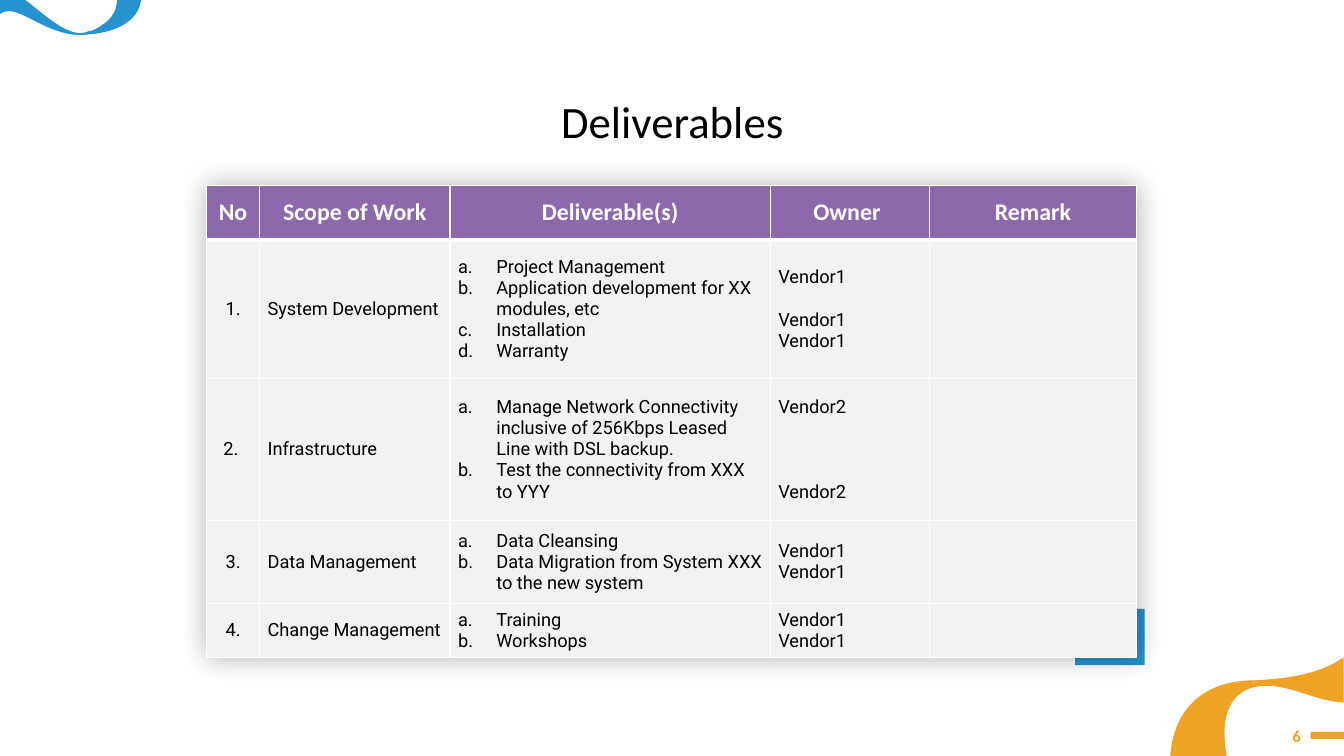
from lxml import etree
from pptx import Presentation
from pptx import util as u
from pptx.dml.color import RGBColor
from pptx.enum import shapes, text
from pptx.oxml import ns

PURPLE = RGBColor(0x8C, 0x69, 0xAD)
BLUE = RGBColor(0x25, 0x93, 0xCF)
ORANGE = RGBColor(0xEF, 0xA3, 0x25)
GREY = RGBColor(0xF2, 0xF2, 0xF2)
BLACK = RGBColor(0, 0, 0)
WHITE = RGBColor(0xFF, 0xFF, 0xFF)

COLS, ROWS = 160, 90
UNIT = u.Inches(7.5) // ROWS
LINE = 15.2

COL_WIDTHS = [6.3, 22.68, 38.12, 18.92, 24.74]
ROW_HEIGHTS = [6.48, 16.53, 16.87, 9.93, 6.36]
HEADERS = ["No", "Scope of Work", "Deliverable(s)", "Owner ", "Remark"]
SCOPES = [
    ("1.", "System Development",
     ["Project Management", "Application development for XX modules, etc",
      "Installation", "Warranty"],
     ["Vendor1", "Vendor1", "Vendor1"], 1),
    ("2. ", "Infrastructure",
     ["a.\tManage Network Connectivity inclusive of 256Kbps Leased Line with DSL backup.",
      "b.\tTest the connectivity from XXX to YYY"],
     ["Vendor2", "Vendor2"], 3),
    ("3.", "Data Management",
     ["Data Cleansing", "Data Migration from System XXX to the new system"],
     ["Vendor1", "Vendor1"], 0),
    ("4.", "Change Management",
     ["Training", "Workshops"], ["Vendor1", "Vendor1"], 0),
]

ORANGE_CURVES = [
    [(82, 30), (90, 28, 97, 28, 105, 29), (105, 29, 79, 20, 50, 28),
     (6, 43, 1, 84, 0, 98), (56, 98), (52, 76, 50, 39, 82, 30)],
    [(82, 23), (70, 23, 59, 25, 50, 28), (79, 20, 105, 29, 105, 29),
     (127, 32, 149, 44, 172, 45), (172, 0), (154, 13, 128, 21, 82, 23)],
]
BLUE_CURVES = [
    [(140, 16), (116, 16), (116, 16, 118, 32, 101, 42), (101, 42),
     (101, 42, 97, 46, 89, 48), (88, 48), (85, 49, 83, 50, 80, 50),
     (76, 50, 71, 50, 65, 50), (73, 52, 81, 52, 90, 51),
     (141, 46, 140, 16, 140, 16)],
    [(80, 50), (51, 49, 19, 0, 0, 9), (0, 31), (14, 20, 35, 43, 65, 50),
     (71, 50, 76, 50, 80, 50)],
]


def grid(*cells):
    return [round(c * UNIT) for c in cells]


def paint(sp, color):
    sp.shadow.inherit = False
    sp.fill.solid()
    sp.fill.fore_color.rgb = color
    sp.line.fill.background()


def block(s, box, color):
    paint(s.shapes.add_shape(shapes.MSO_SHAPE.RECTANGLE, *grid(*box)), color)


def style(p, size, font, color, bold=False, align=text.PP_ALIGN.LEFT):
    p.alignment = align
    for r in p.runs:
        r.font.size = u.Pt(size)
        r.font.name = font
        r.font.bold = bold
        r.font.color.rgb = color


def label(s, box, words, size, color, bold, align, anchor):
    tf = s.shapes.add_textbox(*grid(*box)).text_frame
    tf.word_wrap = True
    tf.vertical_anchor = anchor
    tf.text = words
    style(tf.paragraphs[0], size, "Calibri", color, bold, align)


def bend(sp):
    segments = list(sp._element.iter(ns.qn("a:lnTo")))
    for i in range(0, len(segments), 3):
        curve = etree.Element(ns.qn("a:cubicBezTo"))
        segments[i].addprevious(curve)
        for segment in segments[i:i + 3]:
            curve.append(segment[0])
            segment.getparent().remove(segment)


def ribbon(s, box, cells, curves, color):
    left, top, width, height = grid(*box)
    group = s.shapes.add_group_shape()

    def place(x, y):
        return left + width * x / cells[0], top + height * y / cells[1]

    for first, *parts in curves:
        fb = group.shapes.build_freeform(*place(*first))
        for part in parts:
            part = part * 3 if len(part) == 2 else part
            fb.add_line_segments([place(x, y) for x, y in zip(part[::2], part[1::2])],
                                 close=part[-2:] == first)
        sp = fb.convert_to_shape()
        bend(sp)
        paint(sp, color)


def border(cell, heavy):
    tcPr = cell._tc.get_or_add_tcPr()
    for side in "LRTB":
        ln = etree.SubElement(tcPr, ns.qn("a:ln" + side),
                              w=str(u.Pt(3 if side == heavy else 1)))
        fill = etree.SubElement(ln, ns.qn("a:solidFill"))
        etree.SubElement(fill, ns.qn("a:srgbClr"), val=str(WHITE))


def soft_shadow(table):
    effects = etree.Element(ns.qn("a:effectLst"))
    table._tbl.tblPr.insert(0, effects)
    shadow = etree.SubElement(effects, ns.qn("a:outerShdw"),
                              blurRad=str(u.Pt(20)), dist="0", dir="0")
    color = etree.SubElement(shadow, ns.qn("a:srgbClr"), val=str(BLACK))
    etree.SubElement(color, ns.qn("a:alpha"), val="30000")


def hang(p):
    pPr = p._p.get_or_add_pPr()
    pPr.set("marL", str(u.Inches(0.38)))
    pPr.set("indent", str(-u.Inches(0.38)))
    if "\t" not in p.text:
        etree.SubElement(pPr, ns.qn("a:buFont"), typeface="+mj-lt")
        etree.SubElement(pPr, ns.qn("a:buAutoNum"), type="alphaLcPeriod")


def fill_cell(cell, lines, color, heavy):
    cell.margin_left = cell.margin_right = u.Inches(0.08)
    cell.margin_top = cell.margin_bottom = u.Inches(0.04)
    cell.vertical_anchor = text.MSO_ANCHOR.MIDDLE
    border(cell, heavy)
    cell.fill.solid()
    cell.fill.fore_color.rgb = color
    cell.text_frame.text = "\n".join(lines)
    return cell.text_frame.paragraphs


def deliverables(s, box):
    frame = s.shapes.add_table(len(ROW_HEIGHTS), len(COL_WIDTHS), *grid(*box))
    table = frame.table
    table.horz_banding = False
    soft_shadow(table)
    for col, width in zip(table.columns, grid(*COL_WIDTHS)):
        col.width = width
    for row, height in zip(table.rows, grid(*ROW_HEIGHTS)):
        row.height = height
    for j, header in enumerate(HEADERS):
        p = fill_cell(table.cell(0, j), [header], PURPLE, "B")[0]
        style(p, 17, "Calibri", WHITE, True, text.PP_ALIGN.CENTER)
    for i, (no, scope, items, owners, gap) in enumerate(SCOPES, 1):
        for j, lines in enumerate([[no], [scope], items, owners, []]):
            ps = fill_cell(table.cell(i, j), lines, GREY, "T" if i == 1 else "")
            for p in ps:
                align = text.PP_ALIGN.LEFT if j else text.PP_ALIGN.CENTER
                style(p, 13, "Roboto", BLACK, align=align)
                if j == 2:
                    hang(p)
            if j == 3 and gap:
                ps[1].space_before = u.Pt(gap * LINE)


def page_number(s, box):
    left, top, width, height = box
    label(s, (left, top, width * 0.69, height), "6", 12, ORANGE, True,
          text.PP_ALIGN.RIGHT, text.MSO_ANCHOR.MIDDLE)
    block(s, (left + width * 0.69, top + height * 0.4, width * 0.31, 0.84), ORANGE)


def main():
    prs = Presentation()
    prs.slide_width, prs.slide_height = grid(COLS, ROWS)
    s = prs.slides.add_slide(prs.slide_layouts[6])
    block(s, (128, 72.5, 8.28, 6.68), BLUE)
    label(s, (63.36, 10.56, 33.36, 7.68), "Deliverables", 32, BLACK, False,
          text.PP_ALIGN.CENTER, text.MSO_ANCHOR.TOP)
    page_number(s, (147.24, 85.2, 12.76, 4.8))
    ribbon(s, (139.32, 78.24, 20.64, 11.76), (172, 98), ORANGE_CURVES, ORANGE)
    ribbon(s, (0, -2.04, 16.8, 6.24), (140, 52), BLUE_CURVES, BLUE)
    deliverables(s, (24.6, 22.08, sum(COL_WIDTHS), sum(ROW_HEIGHTS)))
    prs.save("out.pptx")


if __name__ == "__main__":
    main()
